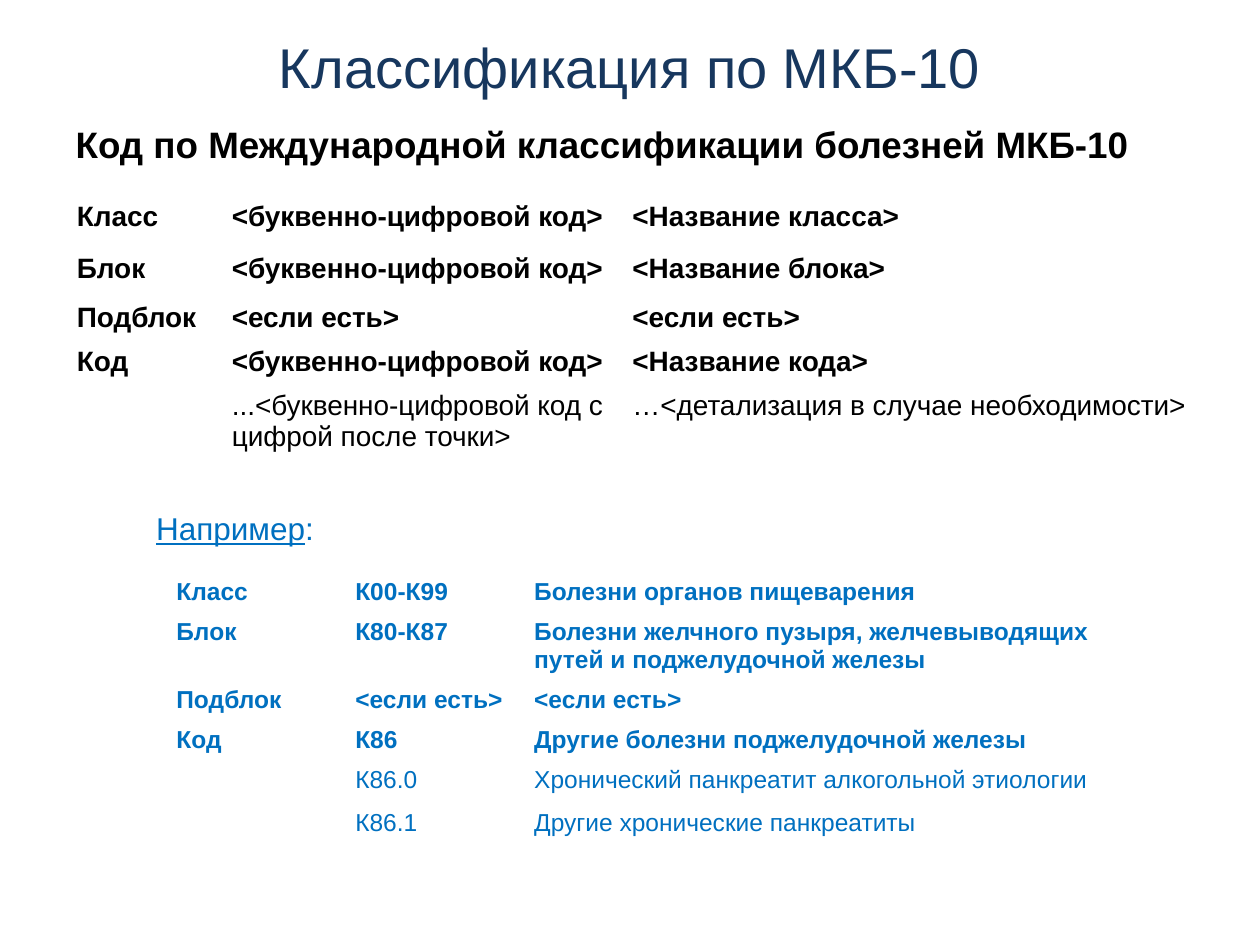
import pptx
import pptx.util
import pptx.dml.color
import pptx.enum.text
from dataclasses import dataclass
from lxml import etree

Inches, Pt = pptx.util.Inches, pptx.util.Pt
Color = pptx.dml.color.RGBColor.from_string
Anchor, Align = pptx.enum.text.MSO_ANCHOR, pptx.enum.text.PP_ALIGN
Fit = pptx.enum.text.MSO_AUTO_SIZE


@dataclass
class Theme:
    face: str = "Arial"
    navy: str = "17375E"
    black: str = "000000"
    blue: str = "0070C0"
    title: int = 32
    lead: int = 21
    label: int = 18
    code: int = 16
    sample: int = 14


theme = Theme()


def write(para, text, size, color, **extra):
    """Add a run in the theme face; extra holds further font values."""
    run = para.add_run()
    run.text = text
    style = {"name": theme.face, "size": Pt(size), **extra}
    for key, value in style.items():
        setattr(run.font, key, value)
    run.font.color.rgb = Color(color)


deck = pptx.Presentation()
deck.slide_width, deck.slide_height = Inches(10), Inches(7.5)
slide = deck.slides.add_slide(deck.slide_layouts[1])

# Title and lead line
title, body = slide.shapes.title, slide.placeholders[1]
for shape, top, high in ((title, 0.13, 0.79), (body, 0.92, 6.3)):
    shape.left, shape.top = Inches(0.5), Inches(top)
    shape.width, shape.height = Inches(9), Inches(high)
    shape.text_frame.auto_size = Fit.NONE
    shape.text_frame.word_wrap = True

title.text_frame.vertical_anchor = Anchor.MIDDLE
head = title.text_frame.paragraphs[0]
head.alignment = Align.CENTER
write(head, "Классификация по МКБ-10", theme.title, theme.navy)

lead = body.text_frame.paragraphs[0]
props = lead._p.get_or_add_pPr()
props.set("marL", "0")
props.set("indent", "0")
etree.SubElement(props, pptx.oxml.ns.qn("a:buNone"))
lead.space_before = Pt(0)
write(lead, "Код по Международной классификации болезней МКБ-10",
      theme.lead, theme.black, bold=True)

# Tables: rows without a level name are details in regular weight
sample = [
    ("Класс", "К00-К99", "Болезни органов пищеварения"),
    ("Блок", "К80-К87", "Болезни желчного пузыря, желчевыводящих "
                        "путей и поджелудочной железы"),
    ("Подблок", "<если есть>", "<если есть>"),
    ("Код", "К86", "Другие болезни поджелудочной железы"),
    ("", "К86.0", "Хронический панкреатит алкогольной этиологии"),
    ("", "К86.1", "Другие хронические панкреатиты"),
]
scheme = [
    ("Класс", "<буквенно-цифровой код>", "<Название класса>"),
    ("Блок", "<буквенно-цифровой код>", "<Название блока>"),
    ("Подблок", "<если есть>", "<если есть>"),
    ("Код", "<буквенно-цифровой код>", "<Название кода>"),
    ("", "...<буквенно-цифровой код с цифрой после точки>",
     "…<детализация в случае необходимости>"),
]
tables = [
    (sample, 1.3, 4.54, (1.42, 1.42, 4.8),
     (0.31, 0.53, 0.28, 0.31, 0.3, 0.41), theme.sample, theme.blue),
    (scheme, 0.51, 1.55, (1.23, 3.18, 4.72),
     (0.41, 0.39, 0.31, 0.34, 0.41), theme.code, theme.black),
]
for rows, left, top, wides, highs, size, color in tables:
    grid = slide.shapes.add_table(
        len(rows), len(wides), Inches(left), Inches(top),
        Inches(sum(wides)), Inches(sum(highs))).table
    grid.first_row = grid.horz_banding = False
    for col, wide in zip(grid.columns, wides):
        col.width = Inches(wide)
    for line, high, texts in zip(grid.rows, highs, rows):
        line.height = Inches(high)
        for cell, text in zip(line.cells, texts):
            cell.fill.background()
            para = cell.text_frame.paragraphs[0]
            if text:
                write(para, text, size, color, bold=bool(texts[0]))
            else:
                # An empty cell must not stretch its row
                para._p.get_or_add_endParaRPr().set("sz", str(size * 100))

# Label above the example
label = slide.shapes.add_textbox(
    Inches(1.14), Inches(3.99), Inches(1.81), Inches(0.4)).text_frame
label.word_wrap = True
label.auto_size = Fit.SHAPE_TO_FIT_TEXT
for text, under in (("Например", True), (":", False)):
    write(label.paragraphs[0], text, theme.label, theme.blue, underline=under)

deck.save("out.pptx")
